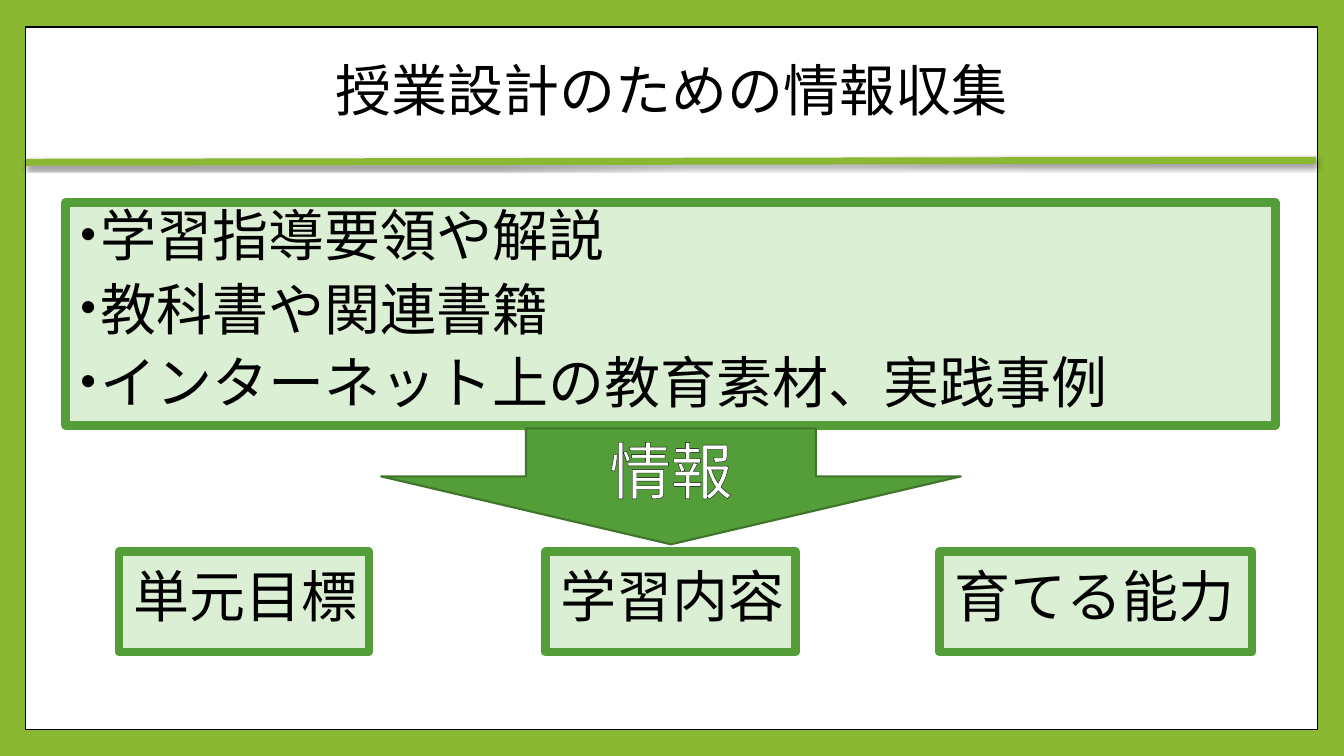
from lxml import etree
from pptx import Presentation
from pptx.dml.color import RGBColor
from pptx.enum.shapes import MSO_CONNECTOR, MSO_SHAPE
from pptx.enum.text import MSO_ANCHOR, PP_ALIGN
from pptx.oxml import parse_xml
from pptx.oxml.ns import nsdecls, qn
from pptx.util import Emu, Inches, Pt

COLORS = {
    "frame": "8AB833",
    "white": "FFFFFF",
    "black": "000000",
    "box": "DBEFD4",
    "green": "549E39",
    "dark_green": "3E752A",
}
SOURCES = ["学習指導要領や解説", "教科書や関連書籍", "インターネット上の教育素材、実践事例"]
OUTCOMES = [("単元目標", 1.18, 2.48), ("学習内容", 5.41, 2.48), ("育てる能力", 9.32, 3.1)]


def rgb(name):
    return RGBColor.from_string(COLORS[name])


def add_filled_shape(slide, kind, bounds, fill, line, line_width):
    shape = slide.shapes.add_shape(kind, *map(Inches, bounds))
    shape.shadow.inherit = False
    shape.fill.solid()
    shape.fill.fore_color.rgb = rgb(fill)
    shape.line.color.rgb = rgb(line)
    shape.line.width = Pt(line_width)
    return shape


def prepare_frame(shape):
    frame = shape.text_frame
    frame.word_wrap = True
    frame.vertical_anchor = MSO_ANCHOR.MIDDLE
    return frame


def add_run(paragraph, text, size=40, font="Arial", color="black"):
    run = paragraph.add_run()
    run.text = text
    run.font.size = Pt(size)
    run.font.name = font
    run.font.color.rgb = rgb(color)
    return run


def set_indent(paragraph, left, first=0):
    properties = paragraph._p.get_or_add_pPr()
    properties.set("marL", str(Inches(left)))
    properties.set("indent", str(Inches(first)))
    return properties


def add_bullet(paragraph):
    properties = set_indent(paragraph, 0.25, -0.2)
    color = etree.SubElement(properties, qn("a:buClr"))
    etree.SubElement(color, qn("a:srgbClr"), val=COLORS["black"])
    etree.SubElement(properties, qn("a:buSzPct"), val="80000")
    etree.SubElement(properties, qn("a:buFont"), typeface="Arial")
    etree.SubElement(properties, qn("a:buChar"), char="•")


def add_text_box_shape(slide, bounds, lines, bulleted=False):
    """Add a pale box with a thick green border and left-aligned lines."""
    box = add_filled_shape(slide, MSO_SHAPE.RECTANGLE, bounds, "box", "green", 6)
    frame = prepare_frame(box)
    frame.margin_right = Inches(0)
    for index, text in enumerate(lines):
        paragraph = frame.add_paragraph() if index else frame.paragraphs[0]
        if bulleted:
            add_bullet(paragraph)
        else:
            set_indent(paragraph, 0.05)
        paragraph.alignment = PP_ALIGN.LEFT
        paragraph.line_spacing = 0.8
        if index:
            paragraph.space_before = Pt(14)
        add_run(paragraph, text)


def add_title(slide, text):
    title = slide.shapes.add_textbox(*map(Inches, (0.26, 0.36, 12.8, 1.14)))
    paragraph = prepare_frame(title).paragraphs[0]
    paragraph.alignment = PP_ALIGN.CENTER
    paragraph.line_spacing = 0.9
    add_run(paragraph, text, font="Cabin")


def add_title_rule(slide):
    rule = slide.shapes.add_connector(
        MSO_CONNECTOR.STRAIGHT, *map(Inches, (0.26, 1.61, 13.05, 1.59)))
    rule.line.color.rgb = rgb("frame")
    rule.line.width = Pt(5)
    rule._element.spPr.append(parse_xml(
        f'<a:effectLst {nsdecls("a")}>'
        f'<a:outerShdw blurRad="{Pt(3)}" dist="{Pt(2)}" dir="5400000" rotWithShape="0">'
        f'<a:srgbClr val="{COLORS["black"]}"><a:alpha val="45000"/></a:srgbClr>'
        '</a:outerShdw></a:effectLst>'))


def add_information_arrow(slide, text):
    arrow = add_filled_shape(slide, MSO_SHAPE.DOWN_ARROW, (3.78, 4.25, 5.75, 1.15),
                             "green", "dark_green", 1.5)
    arrow.adjustments[0] = 0.5
    arrow.adjustments[1] = 0.586
    paragraph = prepare_frame(arrow).paragraphs[0]
    paragraph.alignment = PP_ALIGN.CENTER
    run = add_run(paragraph, text, size=44, color="white")
    run._r.get_or_add_rPr().insert(0, parse_xml(
        f'<a:ln {nsdecls("a")} w="{Emu(Pt(0.75))}"><a:solidFill>'
        f'<a:srgbClr val="{COLORS["black"]}"/></a:solidFill></a:ln>'))


def main():
    presentation = Presentation()
    presentation.slide_width = Inches(13.33)
    presentation.slide_height = Inches(7.5)
    slide = presentation.slides.add_slide(presentation.slide_layouts[6])
    slide.background.fill.solid()
    slide.background.fill.fore_color.rgb = rgb("frame")

    add_filled_shape(slide, MSO_SHAPE.RECTANGLE, (0.25, 0.27, 12.82, 6.97),
                     "white", "black", 1)
    add_title_rule(slide)
    add_title(slide, "授業設計のための情報収集")
    add_text_box_shape(slide, (0.65, 2.01, 12, 2.21), SOURCES, bulleted=True)
    for label, left, width in OUTCOMES:
        add_text_box_shape(slide, (left, 5.47, width, 1), [label])
    add_information_arrow(slide, "情報")
    presentation.save("out.pptx")


if __name__ == "__main__":
    main()
